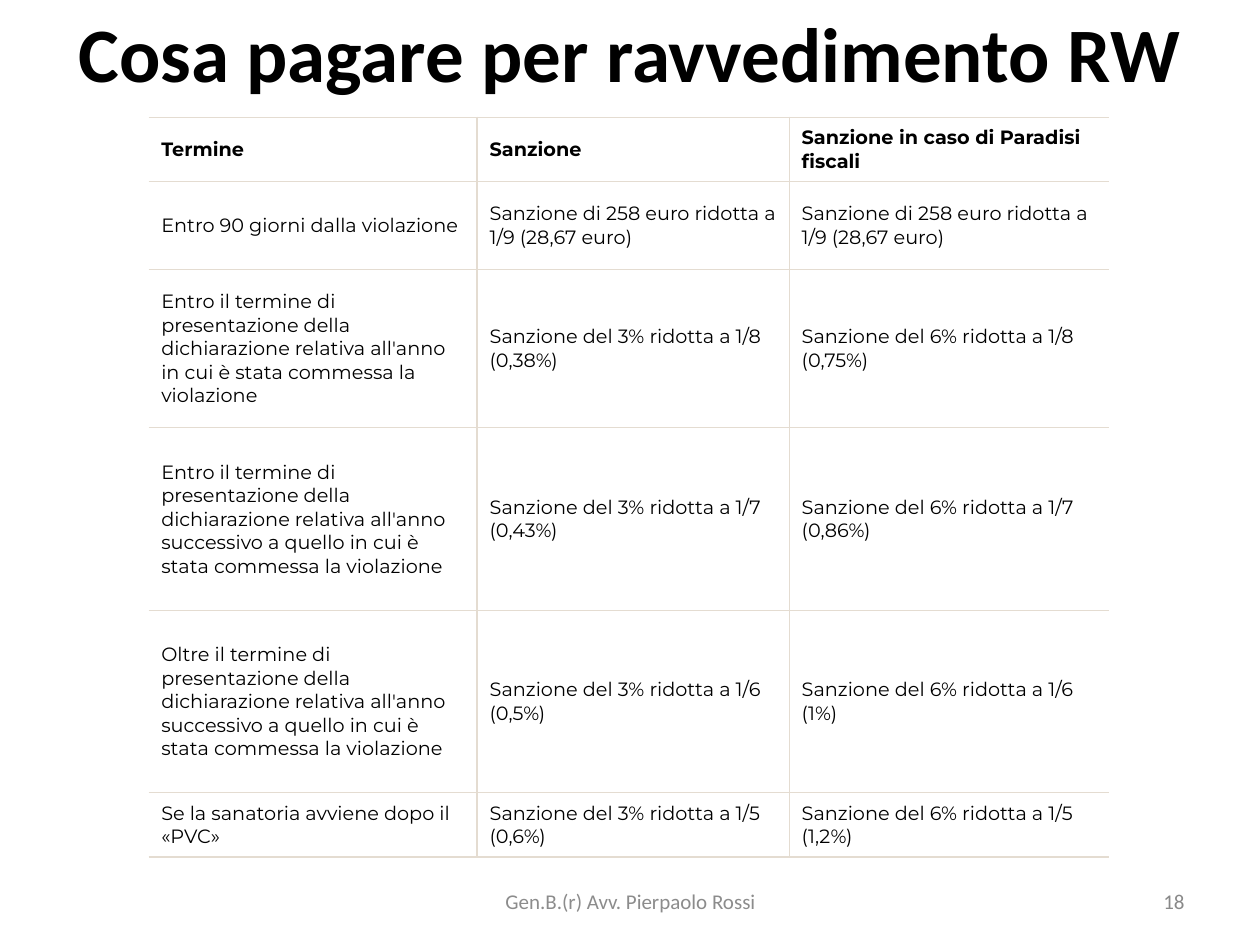
from collections import namedtuple

from lxml.etree import SubElement
from pptx import Presentation
from pptx.dml.color import RGBColor
from pptx.enum.text import MSO_ANCHOR, MSO_AUTO_SIZE, PP_ALIGN
from pptx.oxml.ns import qn
from pptx.util import Emu, Inches, Pt

COLORS = {"text": "000000", "border": "E4DCD1", "footer": "8C8C8C", "number": "898989"}

Box = namedtuple("Box", "left top width height")

COLUMN_WEIGHTS = [2.61, 2.48, 2.54]
ROW_WEIGHTS = [0.51, 0.7, 1.26, 1.45, 1.45, 0.51]
HEADER = ["Termine", "Sanzione", "Sanzione in caso di Paradisi fiscali"]
FIXED_PENALTY = "Sanzione di 258 euro ridotta a 1/9 (28,67 euro)"
NEXT_YEAR = (
    "il termine di presentazione della dichiarazione relativa all'anno "
    "successivo a quello in cui è stata commessa la violazione"
)
PENALTIES = [
    ("Entro il termine di presentazione della dichiarazione relativa all'anno "
     "in cui è stata commessa la violazione", "1/8", "0,38%", "0,75%"),
    (f"Entro {NEXT_YEAR}", "1/7", "0,43%", "0,86%"),
    (f"Oltre {NEXT_YEAR}", "1/6", "0,5%", "1%"),
    ("Se la sanatoria avviene dopo il «PVC»", "1/5", "0,6%", "1,2%"),
]


def share_box(presentation, left, top, width, height):
    """Turn percentages of the slide's size into a Box."""
    across, down = presentation.slide_width / 100, presentation.slide_height / 100
    return Box(Emu(round(left * across)), Emu(round(top * down)),
               Emu(round(width * across)), Emu(round(height * down)))


def write_text(frame, text, size, color="text", font="Calibri", bold=False, align=PP_ALIGN.LEFT):
    frame.word_wrap = True
    paragraph = frame.paragraphs[0]
    paragraph.alignment = align
    run = paragraph.add_run()
    run.text = text
    run.font.name = font
    run.font.size = Pt(size)
    run.font.bold = bold
    run.font.color.rgb = RGBColor.from_string(COLORS[color])


def add_title(slide, box, text):
    title = slide.shapes.title
    title.left, title.top, title.width, title.height = box
    frame = title.text_frame
    frame.auto_size = MSO_AUTO_SIZE.NONE
    frame.vertical_anchor = MSO_ANCHOR.MIDDLE
    write_text(frame, text, 44, bold=True, align=PP_ALIGN.CENTER)


def add_footer_text(slide, box, text, color, align):
    frame = slide.shapes.add_textbox(*box).text_frame
    frame.vertical_anchor = MSO_ANCHOR.MIDDLE
    write_text(frame, text, 12, color=color, align=align)


def set_borders(cell, visible):
    """Draw the sides named in visible (L, R, T, B) and hide the others."""
    properties = cell._tc.get_or_add_tcPr()
    for index, side in enumerate("LRTB"):
        line = properties.makeelement(qn(f"a:ln{side}"), {"w": str(Pt(0.75))})
        properties.insert(index, line)
        if side in visible:
            fill = SubElement(line, qn("a:solidFill"))
            SubElement(fill, qn("a:srgbClr"), val=COLORS["border"])
        else:
            SubElement(line, qn("a:noFill"))


def add_penalty_table(slide, box, rows):
    table = slide.shapes.add_table(len(rows), len(HEADER), *box).table
    table.horz_banding = False
    for column, weight in zip(table.columns, COLUMN_WEIGHTS):
        column.width = Emu(round(box.width * weight / sum(COLUMN_WEIGHTS)))
    for row, weight in zip(table.rows, ROW_WEIGHTS):
        row.height = Emu(round(box.height * weight / sum(ROW_WEIGHTS)))
    column_sides = ["RTB", "LRTB", "LTB"]
    for row_index, texts in enumerate(rows):
        for column_index, text in enumerate(texts):
            cell = table.cell(row_index, column_index)
            cell.fill.background()
            cell.vertical_anchor = MSO_ANCHOR.MIDDLE
            cell.margin_left = cell.margin_right = Inches(0.1)
            cell.margin_top = cell.margin_bottom = Inches(0.07)
            write_text(cell.text_frame, text, 11, font="Montserrat", bold=row_index == 0)
            set_borders(cell, column_sides[column_index])


def penalty_rows():
    rows = [HEADER, ["Entro 90 giorni dalla violazione", FIXED_PENALTY, FIXED_PENALTY]]
    for term, fraction, standard, haven in PENALTIES:
        rows.append([term,
                     f"Sanzione del 3% ridotta a {fraction} ({standard})",
                     f"Sanzione del 6% ridotta a {fraction} ({haven})"])
    return rows


def main():
    presentation = Presentation()
    presentation.slide_width, presentation.slide_height = Inches(10), Inches(7.5)
    slide = presentation.slides.add_slide(presentation.slide_layouts[5])
    add_footer_text(slide, share_box(presentation, 71.7, 92.67, 23.3, 5.33),
                    "18", "number", PP_ALIGN.RIGHT)
    add_title(slide, share_box(presentation, 5, 0.67, 90, 9.6),
              "Cosa pagare per ravvedimento RW")
    add_footer_text(slide, share_box(presentation, 34.2, 92.67, 31.7, 5.33),
                    "Gen.B.(r) Avv. Pierpaolo Rossi", "footer", PP_ALIGN.CENTER)
    add_penalty_table(slide, share_box(presentation, 11.8, 12.4, 76.2, 78.3), penalty_rows())
    presentation.save("out.pptx")


if __name__ == "__main__":
    main()
